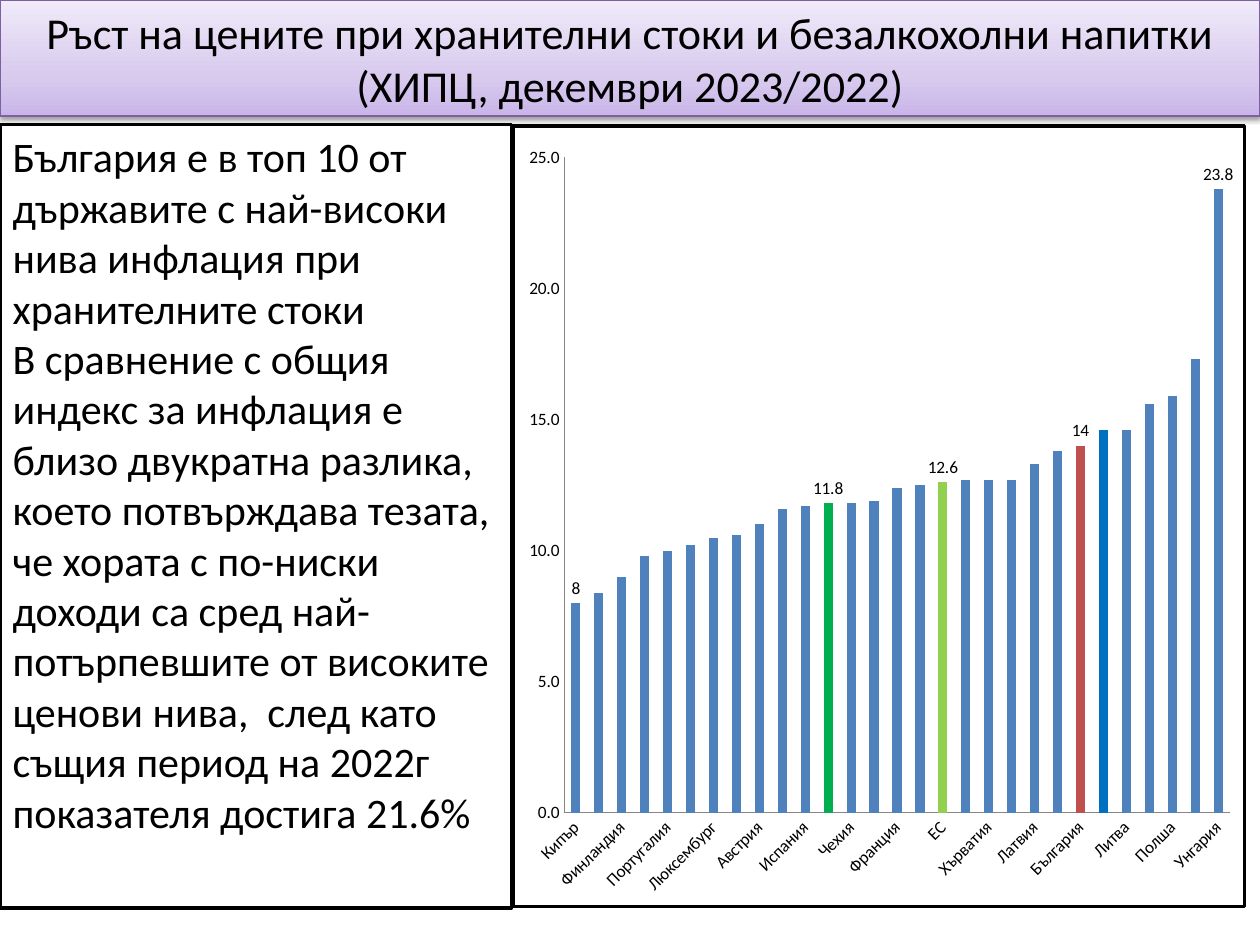
"""Build a slide comparing food price growth across European countries."""
from dataclasses import dataclass

from lxml import etree
from pptx import Presentation
from pptx.chart.chart import Chart
from pptx.chart.data import CategoryChartData
from pptx.dml.color import RGBColor
from pptx.enum.chart import XL_CHART_TYPE, XL_LABEL_POSITION, XL_TICK_MARK
from pptx.enum.text import MSO_ANCHOR, MSO_AUTO_SIZE, PP_ALIGN
from pptx.oxml import parse_xml
from pptx.util import Cm, Pt

COLUMNS = XL_CHART_TYPE.COLUMN_CLUSTERED
OUTSIDE_END = XL_LABEL_POSITION.OUTSIDE_END
NO_TICKS = XL_TICK_MARK.NONE
MIDDLE, TOP = MSO_ANCHOR.MIDDLE, MSO_ANCHOR.TOP
CENTER, LEFT = PP_ALIGN.CENTER, PP_ALIGN.LEFT
NO_AUTOFIT = MSO_AUTO_SIZE.NONE

FONT = "Calibri"
COLORS = {
    "black": "000000", "white": "FFFFFF", "purple": "7D60A0", "axis": "868686",
    "bar": "4F81BD", "eurozone": "00B050", "union": "92D050",
    "bulgaria": "C0504D", "romania": "0070C0",
}
TITLE_GRADIENT = {0: "C9B5E8", 35: "D8CBEE", 100: "F0EAF9"}
DRAWING = 'xmlns:a="http://schemas.openxmlformats.org/drawingml/2006/main"'
CHART = 'xmlns:c="http://schemas.openxmlformats.org/drawingml/2006/chart"'

TITLE = ("Ръст на цените при хранителни стоки и безалкохолни напитки "
         "(ХИПЦ, декември 2023/2022)")
BODY = ("България е в топ 10 от държавите с най-високи нива инфлация при "
        "хранителните стоки\vВ сравнение с общия индекс за инфлация е близо "
        "двукратна разлика, което потвърждава тезата, че хората с по-ниски "
        "доходи са сред най-потърпевшите от високите ценови нива,  след като  "
        "същия период на 2022г показателя достига 21.6%")
INFLATION = {
    "Кипър": 8, "Дания": 8.4, "Финландия": 9, "Ирландия": 9.8,
    "Португалия": 10, "Италия": 10.2, "Люксембург": 10.5, "Малта": 10.6,
    "Австрия": 11, "Гърция": 11.6, "Испания": 11.7, "ЕЗ": 11.8,
    "Чехия": 11.8, "Нидерландия": 11.9, "Франция": 12.4, "Словения": 12.5,
    "ЕС": 12.6, "Германия": 12.7, "Хърватия": 12.7, "Швеция": 12.7,
    "Латвия": 13.3, "Белгия": 13.8, "България": 14, "Румъния": 14.6,
    "Литва": 14.6, "Естония": 15.6, "Полша": 15.9, "Словакия": 17.3,
    "Унгария": 23.8,
}
HIGHLIGHTS = {"ЕЗ": "eurozone", "ЕС": "union", "България": "bulgaria",
              "Румъния": "romania"}
LABELLED = ("Кипър", "ЕЗ", "ЕС", "България", "Унгария")


@dataclass(frozen=True)
class Box:
    """Position and size in centimetres."""
    left: float
    top: float
    width: float
    height: float

    def lengths(self) -> tuple:
        """Return the four values as lengths."""
        return Cm(self.left), Cm(self.top), Cm(self.width), Cm(self.height)


@dataclass(frozen=True)
class Panel:
    """Text and look of a filled placeholder."""
    box: Box
    text: str
    size: float
    alignment: int
    anchor: int
    line_color: str
    line_width: float


TITLE_PANEL = Panel(Box(0, 0, 25.4, 2.34), TITLE, 25.2, CENTER, MIDDLE, "purple", 0.75)
BODY_PANEL = Panel(Box(0, 2.51, 10.31, 15.8), BODY, 24, LEFT, TOP, "black", 2)
CHART_BOX = Box(10.31, 2.51, 14.81, 15.8)


def color(name: str) -> RGBColor:
    """Look up a named colour."""
    return RGBColor.from_string(COLORS[name])


def fill_panel(shape, panel: Panel) -> None:
    """Place a placeholder and set its outline and text."""
    shape.left, shape.top, shape.width, shape.height = panel.box.lengths()
    shape.fill.solid()
    shape.fill.fore_color.rgb = color("white")
    shape.line.color.rgb = color(panel.line_color)
    shape.line.width = Pt(panel.line_width)
    frame = shape.text_frame
    frame.text = panel.text
    frame.word_wrap = True
    frame.auto_size = NO_AUTOFIT
    frame.vertical_anchor = panel.anchor
    paragraph = frame.paragraphs[0]
    paragraph.alignment = panel.alignment
    paragraph.font.name = FONT
    paragraph.font.size = Pt(panel.size)
    paragraph.font.color.rgb = color("black")


def remove_bullet(paragraph) -> None:
    """Turn a list paragraph into plain text."""
    properties = paragraph._p.get_or_add_pPr()
    properties.set("marL", "0")
    properties.set("indent", "0")
    properties.insert(0, parse_xml(f"<a:buNone {DRAWING}/>"))


def decorate_title(shape) -> None:
    """Give the title its gradient and shadow."""
    stops = "".join(f'<a:gs pos="{position * 1000}"><a:srgbClr val="{value}"/></a:gs>'
                    for position, value in TITLE_GRADIENT.items())
    gradient = parse_xml(f'<a:gradFill {DRAWING} rotWithShape="1"><a:gsLst>{stops}</a:gsLst>'
                         '<a:lin ang="16200000" scaled="1"/></a:gradFill>')
    properties = shape._element.spPr
    solid = properties.find("{*}solidFill")
    properties.replace(solid, gradient)
    properties.append(parse_xml(
        f'<a:effectLst {DRAWING}><a:outerShdw blurRad="{Pt(3.1)}" dist="{Pt(1.6)}" '
        'dir="5400000" rotWithShape="0"><a:srgbClr val="000000"><a:alpha val="38000"/>'
        '</a:srgbClr></a:outerShdw></a:effectLst>'))


def frame_chart(chart: Chart) -> None:
    """Set the chart background, border and plot area."""
    chart._chartSpace.find("{*}txPr").addprevious(parse_xml(
        f'<c:spPr {CHART} {DRAWING}><a:solidFill><a:srgbClr val="{COLORS["white"]}"/>'
        f'</a:solidFill><a:ln w="{Pt(2)}"><a:solidFill><a:srgbClr val="{COLORS["black"]}"/>'
        '</a:solidFill></a:ln></c:spPr>'))
    area = chart._chartSpace.chart.plotArea
    for layout in area.findall("{*}layout"):
        area.remove(layout)
    sizes = "".join(f'<c:{key} val="{value}"/>' for key, value in
                    {"x": 0.07, "y": 0.04, "w": 0.91, "h": 0.84}.items())
    area.insert(0, parse_xml(
        f'<c:layout {CHART}><c:manualLayout><c:layoutTarget val="inner"/>'
        f'<c:xMode val="edge"/><c:yMode val="edge"/>{sizes}</c:manualLayout></c:layout>'))


def format_axes(chart: Chart) -> None:
    """Set scale, lines and labels of both axes."""
    categories, values = chart.category_axis, chart.value_axis
    for axis in (categories, values):
        axis.has_major_gridlines = False
        axis.major_tick_mark = axis.minor_tick_mark = NO_TICKS
        axis.format.line.color.rgb = color("axis")
        axis.tick_labels.font.size = Pt(10)
    values.minimum_scale, values.maximum_scale, values.major_unit = 0, 25, 5
    values.tick_labels.number_format = "0.0"
    values.tick_labels.number_format_is_linked = False
    element = categories._element
    element.find("{*}txPr/{*}bodyPr").set("rot", "-2700000")
    skip = etree.fromstring(f'<c:tickLblSkip {CHART} val="2"/>')
    element.find("{*}noMultiLvlLbl").addprevious(skip)


def add_inflation_chart(slide) -> None:
    """Add the column chart of price growth by country."""
    data = CategoryChartData()
    data.categories = list(INFLATION)
    data.add_series("Series 1", list(INFLATION.values()))
    chart = slide.shapes.add_chart(COLUMNS, *CHART_BOX.lengths(), data).chart
    chart.has_legend = chart.has_title = False
    chart.font.name = FONT
    chart.font.size = Pt(10)
    chart.font.color.rgb = color("black")
    plot = chart.plots[0]
    plot.gap_width = 150
    plot.vary_by_categories = False
    series = plot.series[0]
    series.format.fill.solid()
    series.format.fill.fore_color.rgb = color("bar")
    series.data_labels.show_value = False
    for index, country in enumerate(INFLATION):
        if country in HIGHLIGHTS:
            fill = series.points[index].format.fill
            fill.solid()
            fill.fore_color.rgb = color(HIGHLIGHTS[country])
        if country in LABELLED:
            series.points[index].data_label.position = OUTSIDE_END
    format_axes(chart)
    frame_chart(chart)


def main() -> None:
    """Assemble and save the presentation."""
    presentation = Presentation()
    presentation.slide_width, presentation.slide_height = Cm(25.4), Cm(19.05)
    slide = presentation.slides.add_slide(presentation.slide_layouts[1])
    title, body = slide.shapes.title, slide.placeholders[1]
    fill_panel(title, TITLE_PANEL)
    decorate_title(title)
    fill_panel(body, BODY_PANEL)
    remove_bullet(body.text_frame.paragraphs[0])
    add_inflation_chart(slide)
    presentation.save("out.pptx")


if __name__ == "__main__":
    main()
